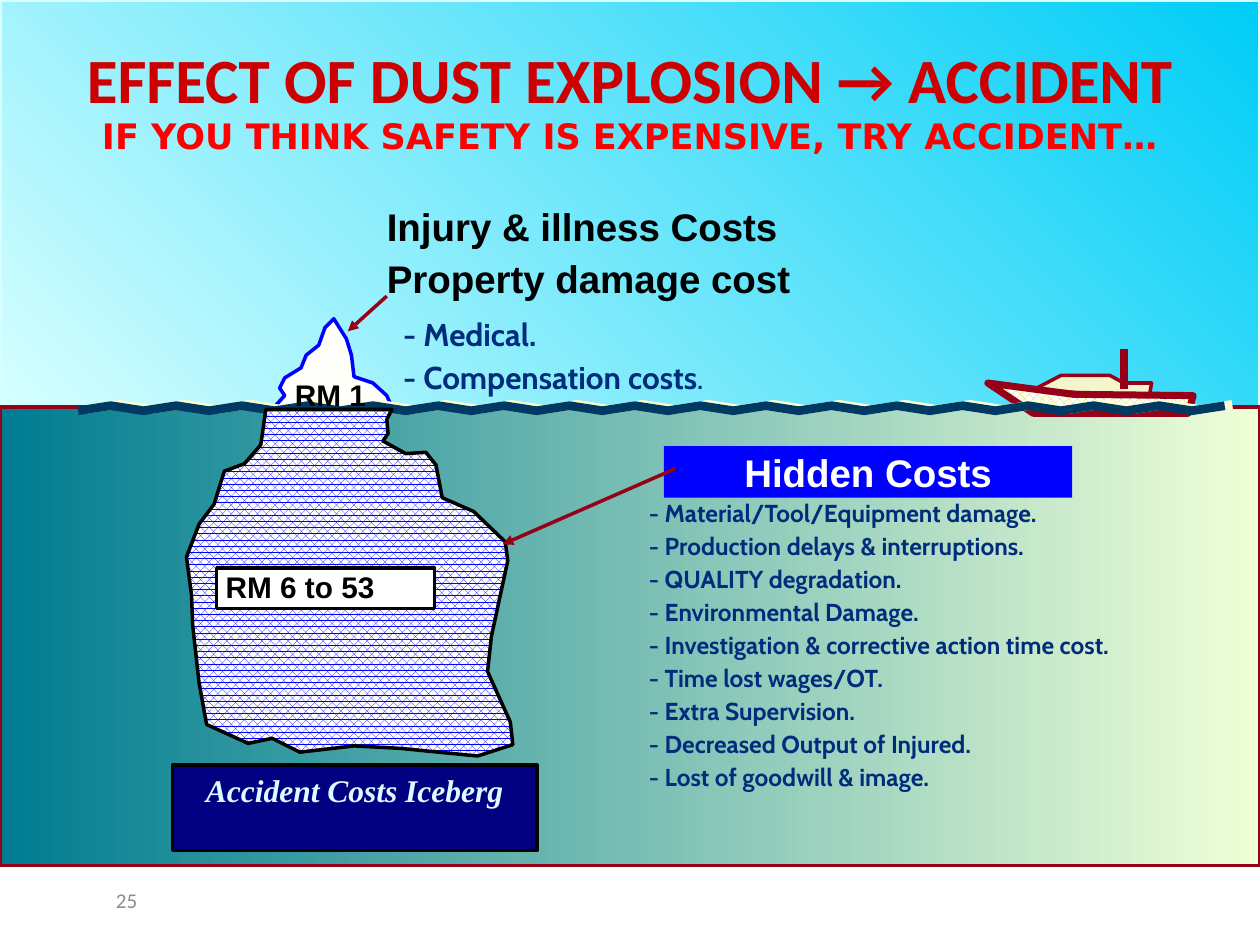
"""Build the accident cost iceberg slide on a grid of 1000 columns by 750 rows."""
from math import cos, pi

from lxml import etree
from pptx import Presentation
from pptx.dml.color import RGBColor
from pptx.enum.dml import MSO_PATTERN
from pptx.enum.shapes import MSO_CONNECTOR, MSO_SHAPE
from pptx.enum.text import MSO_ANCHOR, MSO_AUTO_SIZE, PP_ALIGN
from pptx.oxml.ns import qn
from pptx.util import Inches, Pt

RECT, STRAIGHT = MSO_SHAPE.RECTANGLE, MSO_CONNECTOR.STRAIGHT
LEFT, CENTER = PP_ALIGN.LEFT, PP_ALIGN.CENTER
TOP, MIDDLE = MSO_ANCHOR.TOP, MSO_ANCHOR.MIDDLE
PCT50, PCT70 = MSO_PATTERN.PERCENT_50, MSO_PATTERN.PERCENT_70
NO_RESIZE = MSO_AUTO_SIZE.NONE
COLORS = {
    "sky_light": "D8FFFF", "sky_deep": "00CDF7", "sea_deep": "007C91", "sea_light": "F0FFD7",
    "maroon": "960018", "blue": "0000FF", "white": "FFFFFF", "black": "000000",
    "cream": "FFFFD0", "sand": "F5F5CC", "olive": "D5D500", "wave": "003A63",
    "navy": "000080", "ice": "DAFBFF", "ink": "002C7C", "title": "CC0000",
    "red": "FF0000", "grey": "8C8C8C",
}
C = {name: RGBColor.from_string(value) for name, value in COLORS.items()}
STYLES = {
    "title": {"font": "Calibri", "size": 36, "color": "title", "align": CENTER, "anchor": MIDDLE},
    "subtitle": {"font": "DejaVu Sans", "size": 20, "color": "red", "align": CENTER},
    "heading": {"font": "Arial", "size": 22, "color": "black"},
    "banner": {"font": "Arial", "size": 22, "color": "white", "align": CENTER, "anchor": MIDDLE},
    "amount": {"font": "Arial", "size": 17, "color": "black"},
    "caption": {"font": "Times New Roman", "size": 18, "color": "ice", "align": CENTER, "italic": True},
    "costs": {"font": "Cabin", "size": 18, "color": "ink"},
    "list": {"font": "Cabin", "size": 14, "color": "ink"},
    "number": {"font": "Calibri", "size": 12, "color": "grey", "align": CENTER, "anchor": MIDDLE, "bold": False},
}
U = Inches(0.01)
COLS, ROWS = 1000, 750
WATERLINE, SEABED = 323, 687
GAP = 0.15


def add_run(p, text, style):
    """Append a run in a named style to a paragraph."""
    fmt = STYLES[style]
    r = p.add_run()
    r.text = text
    for key, value in {"name": fmt["font"], "size": Pt(fmt["size"]), "bold": fmt.get("bold", True),
                       "italic": fmt.get("italic", False)}.items():
        setattr(r.font, key, value)
    r.font.color.rgb = C[fmt["color"]]


def write(sp, lines, style, inset=(0, 0)):
    """Fill a shape with one paragraph per line and return its text frame."""
    fmt, tf = STYLES[style], sp.text_frame
    for key, value in {"word_wrap": True, "auto_size": NO_RESIZE, "vertical_anchor": fmt.get("anchor", TOP),
                       "margin_left": inset[0] * U, "margin_top": inset[1] * U,
                       "margin_right": 0, "margin_bottom": 0}.items():
        setattr(tf, key, value)
    for i, text in enumerate(lines):
        p = tf.add_paragraph() if i else tf.paragraphs[0]
        for key, value in {"alignment": fmt.get("align", LEFT), "space_before": Pt(0),
                           "space_after": Pt(GAP * fmt["size"])}.items():
            setattr(p, key, value)
        add_run(p, text, style)
    return tf


prs = Presentation()
prs.slide_width, prs.slide_height = COLS * U, ROWS * U
s = prs.slides.add_slide(prs.slide_layouts[1])
title, body = s.placeholders[0], s.placeholders[1]

# name: top, bottom, gradient stops, angle, outline
BACKDROP = {
    "sky": (0, 335, ("sky_light", "sky_deep"), 45, "sky_light"),
    "sea": (WATERLINE, SEABED, ("sea_deep", "sea_light"), 0, "maroon"),
}
for top, bottom, stops, angle, line in BACKDROP.values():
    sp = s.shapes.add_shape(RECT, 0, top * U, COLS * U, (bottom - top) * U)
    sp.shadow.inherit = False
    sp.fill.gradient()
    sp.fill.gradient_angle = angle
    for stop, name in zip(sp.fill.gradient_stops, stops):
        stop.color.rgb = C[name]
    sp.line.color.rgb, sp.line.width = C[line], Pt(2)

tip_left = [(215, 326), (226, 314), (222, 308), (226, 300), (239, 292), (243, 282), (253, 274), (258, 260)]
tip_right = [(265, 253), (275, 269), (279, 282), (281, 299), (296, 304), (307, 314), (311, 323)]
berg_left = [(211, 325), (207, 353), (194, 368), (178, 374), (170, 400), (158, 416), (148, 442),
             (152, 472), (153, 497), (158, 542), (164, 575)]
berg_foot = [(197, 590), (216, 586), (238, 597), (281, 592), (318, 594), (379, 600), (407, 591)]
berg_right = [(405, 573), (387, 533), (390, 505), (403, 445), (401, 430), (376, 406), (351, 395),
              (346, 369), (338, 359), (322, 360), (304, 350), (308, 344), (307, 333), (311, 325)]
cabin = [(842, 298), (881, 298), (892, 304), (914, 304), (912, 316), (821, 309)]
hull = [(820, 328), (943, 328), (947, 314), (852, 313), (784, 304)]
STEP, SWELL = 13, 2
foam = [(68 + i * STEP, WATERLINE + SWELL * cos(i * pi / 2)) for i in range(71)]
water = [(x - 6, y + 1.4) for x, y in foam]

for points, closed, fill, pattern, line, width in [
    (tip_left + tip_right, True, "cream", PCT50, "blue", 2),
    (cabin, True, "sand", None, "maroon", 2),
    (hull, True, "olive", PCT50, "maroon", 4),
    (foam, False, None, None, "cream", 5),
    (water, False, None, None, "wave", 5),
    (berg_left + berg_foot + berg_right, True, "blue", PCT70, "black", 2),
]:
    outline = s.shapes.build_freeform(*points[0], scale=U)
    outline.add_line_segments(points[1:], close=closed)
    sp = outline.convert_to_shape()
    sp.shadow.inherit = False
    if pattern:
        sp.fill.patterned()
        sp.fill.pattern = pattern
        sp.fill.fore_color.rgb, sp.fill.back_color.rgb = C[fill], C["white"]
    elif fill:
        sp.fill.solid()
        sp.fill.fore_color.rgb = C[fill]
    else:
        sp.fill.background()
    sp.line.color.rgb, sp.line.width = C[line], Pt(width)

for at, fill, line, text, style, inset in [
    ((137, 607, 289, 68), "navy", "black", "Accident Costs Iceberg", "caption", (0, 5)),
    ((172, 451, 173, 32), "white", "black", "RM 6 to 53", "amount", (7, 0)),
    ((527, 354, 324, 41), "blue", None, "Hidden Costs", "banner", (0, 0)),
]:
    sp = s.shapes.add_shape(RECT, *(v * U for v in at))
    sp.shadow.inherit = False
    sp.fill.solid()
    sp.fill.fore_color.rgb = C[fill]
    if line:
        sp.line.color.rgb, sp.line.width = C[line], Pt(2)
    else:
        sp.line.fill.background()
    write(sp, [text], style, inset)

for at, lines, style in [
    ((234, 299, 81, 28), ["RM 1"], "amount"),
    ((307, 161, 642, 80), ["Injury & illness Costs", "Property damage cost"], "heading"),
    ((0, 91, COLS, 103), ["IF YOU THINK SAFETY IS EXPENSIVE, TRY ACCIDENT…"], "subtitle"),
    ((50, 695, 101, 39), ["25"], "number"),
    ((320, 250, 338, 65), ["- Medical.", "- Compensation costs"], "costs"),
]:
    tf = write(s.shapes.add_textbox(*(v * U for v in at)), lines, style)
add_run(tf.paragraphs[-1], ".", "list")

LINES = {
    "mast": ((892, 277, 892, 309), 5, None),
    "visible cost": ((307, 235, 276, 263), 2, "triangle"),
    "hidden cost": ((536, 372, 399, 432), 2, "triangle"),
}
for ends, width, head in LINES.values():
    sp = s.shapes.add_connector(STRAIGHT, *(v * U for v in ends))
    sp.line.color.rgb, sp.line.width = C["maroon"], Pt(width)
    if head:
        etree.SubElement(sp.line._get_or_add_ln(), qn("a:tailEnd"), type=head)
    etree.SubElement(sp.element.spPr, qn("a:effectLst"))

HIDDEN = ["Material/Tool/Equipment damage.", "Production delays & interruptions.", "QUALITY degradation.",
          "Environmental Damage.", "Investigation & corrective action time cost.", "Time lost wages/OT.",
          "Extra Supervision.", "Decreased Output of Injured.", "Lost of goodwill & image."]
for sp, at, lines, style in [
    (body, (515, 395, 466, 237), [f"- {item}" for item in HIDDEN], "list"),
    (title, (0, 0, COLS, 125), ["EFFECT OF DUST EXPLOSION → ACCIDENT"], "title"),
]:
    sp.left, sp.top, sp.width, sp.height = (v * U for v in at)
    for p in write(sp, lines, style).paragraphs:
        pPr = p._p.get_or_add_pPr()
        for key in ("marL", "indent"):
            pPr.set(key, "0")
        etree.SubElement(pPr, qn("a:buNone"))
    s.shapes.element.append(sp.element)

prs.save("out.pptx")
